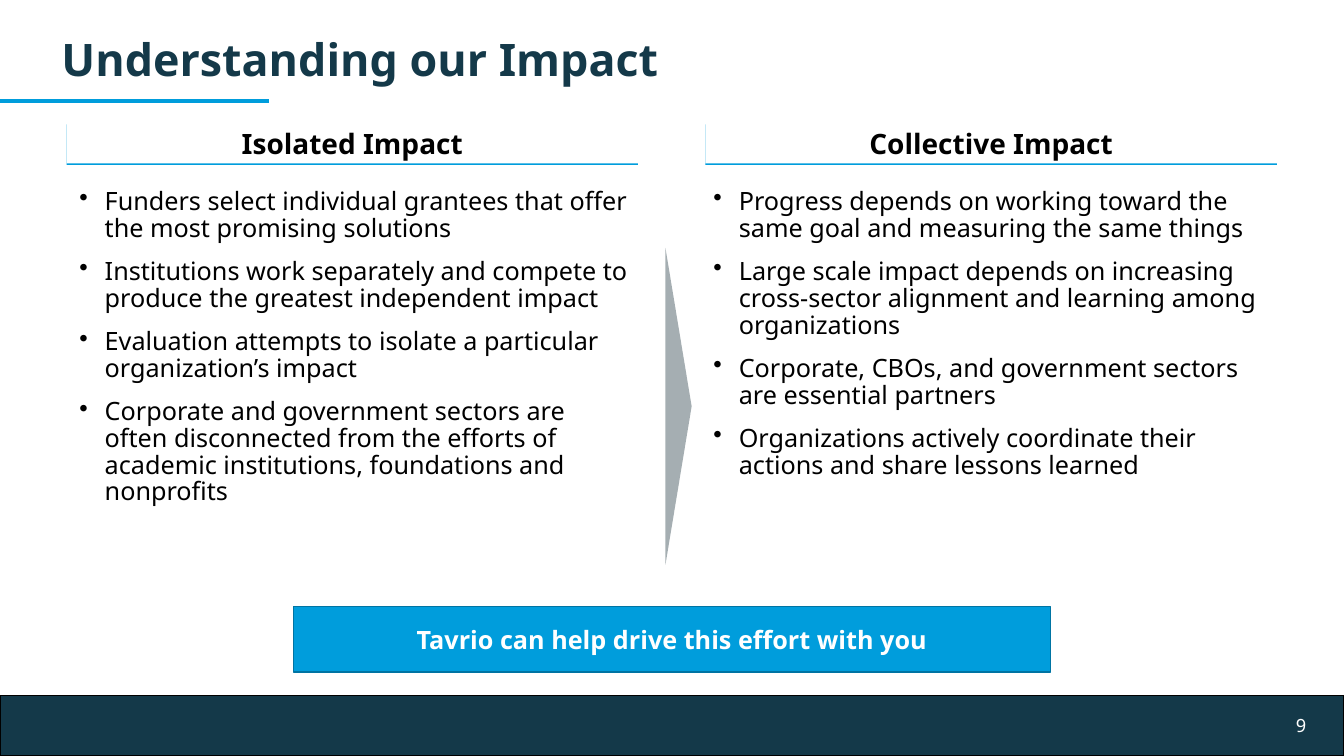
from lxml import etree
from pptx import Presentation
from pptx.dml.color import RGBColor
from pptx.enum import shapes, text
from pptx.oxml import ns
from pptx.util import Cm, Pt

NAVY, BLUE, BLACK, WHITE = "143949", "009DDC", "000000", "FFFFFF"
LEFT, CENTER, RIGHT = text.PP_ALIGN.LEFT, text.PP_ALIGN.CENTER, text.PP_ALIGN.RIGHT


def color(value):
    return RGBColor.from_string(value)


def write(shape, lines, size, value, bold=False, align=LEFT, spacing=1.0,
          anchor=text.MSO_ANCHOR.TOP, bullets=False):
    frame = shape.text_frame
    frame.word_wrap = True
    frame.vertical_anchor = anchor
    for index, line in enumerate(lines):
        paragraph = frame.add_paragraph() if index else frame.paragraphs[0]
        paragraph.text = line
        paragraph.alignment = align
        paragraph.line_spacing = spacing
        if bullets:
            paragraph.space_after = Pt(12)
            properties = paragraph._p.get_or_add_pPr()
            properties.set("marL", str(Cm(0.64)))
            properties.set("indent", str(Cm(-0.64)))
            etree.SubElement(properties, ns.qn("a:buChar")).set("char", "•")
        paragraph.font.name = "Noto Sans"
        paragraph.font.size = Pt(size)
        paragraph.font.bold = bold
        paragraph.font.color.rgb = color(value)


presentation = Presentation()
presentation.slide_width, presentation.slide_height = Cm(33.87), Cm(19.05)
slide = presentation.slides.add_slide(presentation.slide_layouts[6])

# Filled shapes: footer bar, arrow between the columns, call to action
boxes = []
for kind, left, top, width, height, fill, outline in (
    (shapes.MSO_SHAPE.RECTANGLE, 0, 17.53, 33.87, 1.52, NAVY, BLACK),
    (shapes.MSO_SHAPE.ISOSCELES_TRIANGLE, 13.11, 9.91, 7.98, 0.66, "A5AEB2", None),
    (shapes.MSO_SHAPE.RECTANGLE, 7.39, 15.29, 19.08, 1.65, BLUE, "0074A3"),
):
    shape = slide.shapes.add_shape(kind, Cm(left), Cm(top), Cm(width), Cm(height))
    shape.shadow.inherit = False
    shape.fill.solid()
    shape.fill.fore_color.rgb = color(fill)
    if outline:
        shape.line.color.rgb = color(outline)
        shape.line.width = Pt(1)
    else:
        shape.line.fill.background()
    boxes.append(shape)
footer, arrow, call_to_action = boxes
arrow.rotation = 90
write(call_to_action, ["Tavrio can help drive this effort with you"], 18, WHITE,
      bold=True, align=CENTER, anchor=text.MSO_ANCHOR.MIDDLE)

# Slide number
number = slide.shapes.add_textbox(Cm(28.98), Cm(17.78), Cm(4.19), Cm(1.07))
write(number, ["9"], 13, WHITE, align=RIGHT, spacing=0.9, anchor=text.MSO_ANCHOR.MIDDLE)

# Title and its underline
title = slide.shapes.add_textbox(Cm(1.3), Cm(0.84), Cm(30.88), Cm(1.27))
write(title, ["Understanding our Impact"], 32, NAVY, bold=True, spacing=0.9)
underline = slide.shapes.add_connector(
    shapes.MSO_CONNECTOR.STRAIGHT, 0, Cm(2.54), Cm(6.78), Cm(2.54))
underline.line.color.rgb = color(BLUE)
underline.line.width = Pt(3)
etree.SubElement(underline._element.spPr, ns.qn("a:effectLst"))

# Two columns, each a heading with a blue edge and a bulleted list
columns = (
    (1.68, 1.75, "Isolated Impact", (
        "Funders select individual grantees that offer the most promising solutions",
        "Institutions work separately and compete to produce the greatest independent impact",
        "Evaluation attempts to isolate a particular organization’s impact",
        "Corporate and government sectors are often disconnected from the efforts of "
        "academic institutions, foundations and nonprofits")),
    (17.78, 17.73, "Collective Impact", (
        "Progress depends on working toward the same goal and measuring the same things",
        "Large scale impact depends on increasing cross-sector alignment and learning "
        "among organizations",
        "Corporate, CBOs, and government sectors are essential partners",
        "Organizations actively coordinate their actions and share lessons learned")),
)
for heading_left, list_left, heading_text, points in columns:
    heading = slide.shapes.add_shape(
        shapes.MSO_SHAPE.RECTANGLE, Cm(heading_left), Cm(3.1), Cm(14.4), Cm(1.02))
    heading.fill.solid()
    heading.fill.fore_color.rgb = color(WHITE)
    heading.line.fill.background()
    heading.shadow.inherit = False
    effects = heading._element.spPr.find(ns.qn("a:effectLst"))
    shadow = etree.SubElement(effects, ns.qn("a:outerShdw"), blurRad="0",
                              dist=str(Pt(1)), dir="5400000", algn="t", rotWithShape="0")
    etree.SubElement(shadow, ns.qn("a:srgbClr"), val=BLUE)
    heading.text_frame.margin_top = 0
    heading.text_frame.margin_bottom = Cm(0.08)
    write(heading, [heading_text], 20, BLACK, bold=True, align=CENTER, spacing=0.9,
          anchor=text.MSO_ANCHOR.BOTTOM)

    bullet_list = slide.shapes.add_textbox(Cm(list_left), Cm(4.65), Cm(14.33), Cm(11.15))
    write(bullet_list, points, 18, BLACK, spacing=0.88, bullets=True)

presentation.save("out.pptx")
